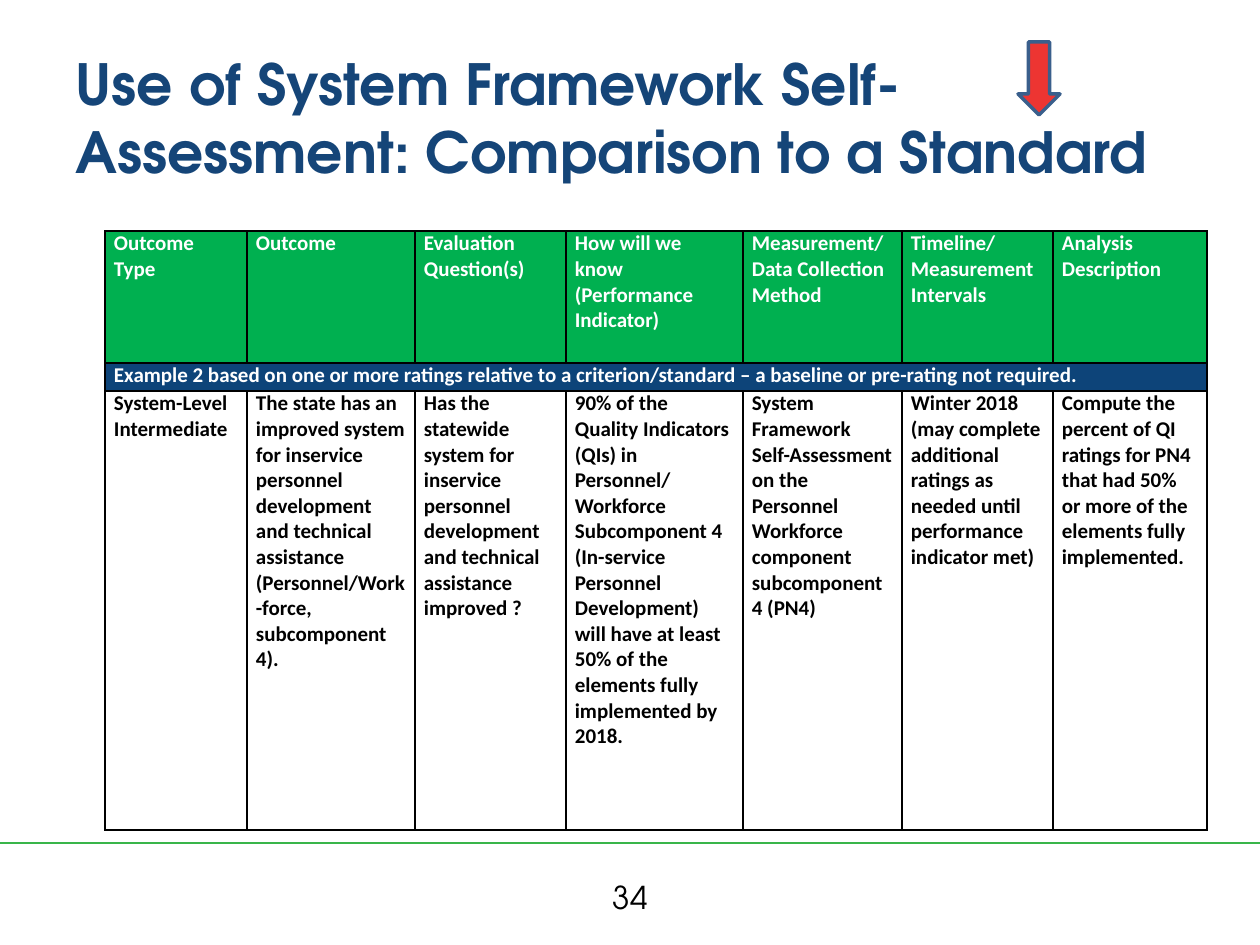
import pptx
import pptx.dml.color
import pptx.enum.shapes
import pptx.enum.text
import pptx.oxml
import pptx.oxml.ns
import pptx.util

PX = 914400 / 126
TITLE_FONT = "TeX Gyre Adventor"


def px(*lengths):
    return [pptx.util.Emu(round(n * PX)) for n in lengths]


def rgb(color):
    return pptx.dml.color.RGBColor.from_string(color)


prs = pptx.Presentation()
prs.slide_width, prs.slide_height = px(1260, 945)
s = prs.slides.add_slide(prs.slide_layouts[5])

# Footer rule
x1, y, x2 = px(0, 843, 1260)
rule = s.shapes.add_connector(pptx.enum.shapes.MSO_CONNECTOR.STRAIGHT, x1, y, x2, y)
rule.line.color.rgb = rgb("39B54A")
rule.line.width = pptx.util.Pt(1.5)
rule._element.spPr.append(pptx.oxml.parse_xml(
    f'<a:effectLst {pptx.oxml.ns.nsdecls("a")}/>'))

# Title
title = s.shapes.title
title.left, title.top, title.width, title.height = px(63, 38, 1134, 157)
tf = title.text_frame
tf.text = "Use of System Framework Self-Assessment: Comparison to a Standard"
tf.auto_size = pptx.enum.text.MSO_AUTO_SIZE.NONE
tf.vertical_anchor = pptx.enum.text.MSO_ANCHOR.MIDDLE
p = tf.paragraphs[0]
p.alignment = pptx.enum.text.PP_ALIGN.LEFT
font = p.runs[0].font
font.name, font.size, font.bold = TITLE_FONT, pptx.util.Pt(32.4), True
font.color.rgb = rgb("154578")

# Page number
tf = s.shapes.add_textbox(*px(483, 872, 294, 50)).text_frame
tf.word_wrap = True
tf.vertical_anchor = pptx.enum.text.MSO_ANCHOR.MIDDLE
tf.text = "34"
p = tf.paragraphs[0]
p.alignment = pptx.enum.text.PP_ALIGN.CENTER
font = p.runs[0].font
font.name, font.size = TITLE_FONT, pptx.util.Pt(18)
font.color.rgb = rgb("000000")

# Evaluation plan table: each row has a height, fill, text colour and cells
col_widths = [142, 168, 151, 177, 159, 151, 154]
rows = [
    (132, "00B050", "FFFFFF", [
        "Outcome Type",
        "Outcome",
        "Evaluation Question(s)",
        "How will we know\n(Performance Indicator)",
        "Measurement/\nData Collection Method",
        "Timeline/\nMeasurement Intervals",
        "Analysis Description",
    ]),
    (28, "0D4479", "FFFFFF", [
        "Example 2 based on one or more ratings relative to a criterion/standard"
        " – a baseline or pre-rating not required.",
    ]),
    (439, None, "000000", [
        "System-Level\nIntermediate",
        "The state has an improved system for inservice personnel development"
        " and technical assistance (Personnel/Work-force, subcomponent 4).",
        "Has the statewide system for inservice personnel development"
        " and technical assistance improved ?",
        "90% of the Quality Indicators (QIs) in Personnel/\n"
        "Workforce Subcomponent 4 (In-service Personnel Development) will have"
        " at least 50% of the elements fully implemented by 2018.",
        "System Framework Self-Assessment on the Personnel Workforce component"
        " subcomponent 4 (PN4)",
        "Winter 2018\n(may complete additional ratings as needed until"
        " performance indicator met)",
        "Compute the percent of QI ratings for PN4 that had 50% or more of the"
        " elements fully implemented.",
    ]),
]
table = s.shapes.add_table(
    len(rows), len(col_widths),
    *px(105, 231, sum(col_widths), sum(row[0] for row in rows))).table
table.first_row = table.horz_banding = False
for col, width in zip(table.columns, px(*col_widths)):
    col.width = width
table.cell(1, 0).merge(table.cell(1, len(col_widths) - 1))

for r, (height, fill, color, texts) in enumerate(rows):
    table.rows[r].height = px(height)[0]
    for c in range(len(col_widths)):
        cell = table.cell(r, c)
        cell.margin_left, cell.margin_right, cell.margin_top, cell.margin_bottom = px(9, 9, 0, 0)
        # Borders come before the fill in the cell properties
        for side in ("lnL", "lnR", "lnT", "lnB"):
            cell._tc.get_or_add_tcPr().append(pptx.oxml.parse_xml(
                f'<a:{side} {pptx.oxml.ns.nsdecls("a")} w="12700"><a:solidFill>'
                f'<a:srgbClr val="000000"/></a:solidFill></a:{side}>'))
        if fill:
            cell.fill.solid()
            cell.fill.fore_color.rgb = rgb(fill)
        else:
            cell.fill.background()
        if c >= len(texts):
            continue
        cell.text_frame.text = texts[c]
        for p in cell.text_frame.paragraphs:
            font = p.runs[0].font
            font.name, font.size, font.bold = "Calibri", pptx.util.Pt(12), True
            font.color.rgb = rgb(color)

# Arrow pointing at the standard
sp = s.shapes.add_shape(pptx.enum.shapes.MSO_SHAPE.DOWN_ARROW, *px(1018, 42, 42, 73))
sp.shadow.inherit = False
sp.fill.solid()
sp.fill.fore_color.rgb = rgb("ED3532")
sp.line.color.rgb = rgb("3A5F8C")
sp.line.width = pptx.util.Pt(2)

prs.save("out.pptx")
